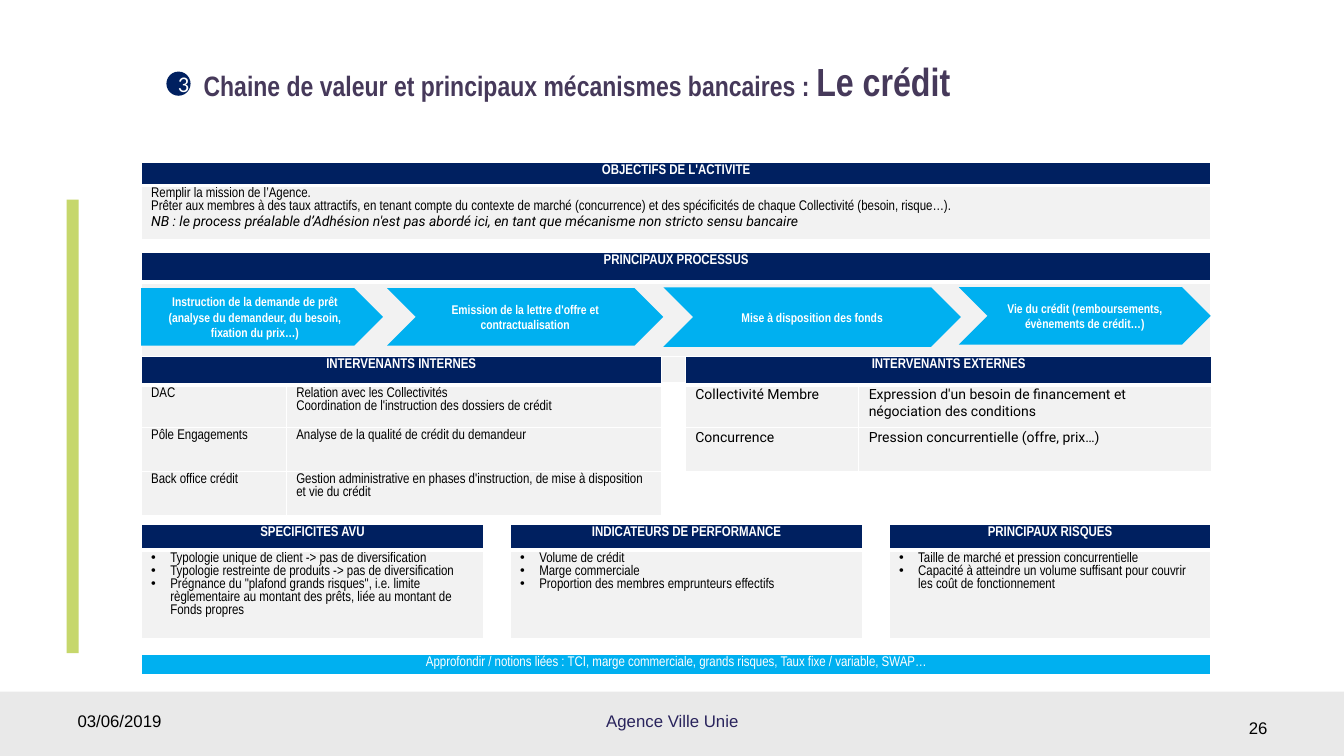
from dataclasses import dataclass, replace

import lxml.etree
import pptx
import pptx.dml.color
import pptx.enum.shapes
import pptx.enum.text
import pptx.oxml.ns
import pptx.util

SHAPES = pptx.enum.shapes.MSO_SHAPE
ALIGN = pptx.enum.text.PP_ALIGN
MIDDLE = pptx.enum.text.MSO_ANCHOR.MIDDLE
NAVY, SKY, PALE, WHITE, BLACK = "002060", "00B0F0", "F2F2F2", "FFFFFF", "000000"
LEFT, WIDTH = 10.5, 79.6  # content column, in percent of the slide width

deck = pptx.Presentation()
deck.slide_width = pptx.util.Inches(13.33)
deck.slide_height = pptx.util.Inches(7.5)
slide = deck.slides.add_slide(deck.slide_layouts[5])


@dataclass(frozen=True)
class Area:
    """A rectangle in percent of the slide's width and height."""
    left: float
    top: float
    width: float
    height: float

    def lengths(self) -> tuple[int, int, int, int]:
        return across(self.left), down(self.top), across(self.width), down(self.height)


@dataclass(frozen=True)
class Style:
    size: float = 10
    color: str = BLACK
    font: str = "Arial Narrow"
    bold: bool = False
    italic: bool = False
    align: ALIGN = ALIGN.LEFT


@dataclass(frozen=True)
class Cell:
    lines: tuple[str, ...] = ()
    fill: str = PALE
    style: Style = Style()
    bulleted: bool = False
    bottom_border: float = 1


@dataclass(frozen=True)
class Step:
    label: str
    preset: SHAPES
    area: Area


def across(percent: float) -> int:
    return round(deck.slide_width * percent / 100)


def down(percent: float) -> int:
    return round(deck.slide_height * percent / 100)


def rgb(value: str) -> pptx.dml.color.RGBColor:
    return pptx.dml.color.RGBColor.from_string(value)


def format_paragraph(para, style: Style) -> None:
    para.alignment = style.align
    for run in para.runs:
        run.font.size = pptx.util.Pt(style.size)
        run.font.name = style.font
        run.font.bold = style.bold
        run.font.italic = style.italic
        run.font.color.rgb = rgb(style.color)


def add_shape(preset: SHAPES, area: Area, fill: str, text: str = "", style: Style = Style()):
    shape = slide.shapes.add_shape(preset, *area.lengths())
    shape.shadow.inherit = False
    shape.fill.solid()
    shape.fill.fore_color.rgb = rgb(fill)
    shape.line.fill.background()
    shape.text_frame.text = text
    shape.text_frame.vertical_anchor = MIDDLE
    format_paragraph(shape.text_frame.paragraphs[0], style)
    return shape


def add_label(area: Area, text: str, style: Style) -> None:
    box = slide.shapes.add_textbox(*area.lengths())
    box.text_frame.word_wrap = True
    box.text_frame.vertical_anchor = MIDDLE
    box.text_frame.text = text
    format_paragraph(box.text_frame.paragraphs[0], style)


def add_element(parent, tag: str, **attributes: str):
    return lxml.etree.SubElement(parent, pptx.oxml.ns.qn(tag), attributes)


def add_borders(table_cell, bottom: float) -> None:
    properties = table_cell._tc.get_or_add_tcPr()
    for side, points in (("L", 1), ("R", 1), ("T", 1), ("B", bottom)):
        line = add_element(properties, f"a:ln{side}", w=str(pptx.util.Pt(points)))
        add_element(add_element(line, "a:solidFill"), "a:srgbClr", val=WHITE)


def add_bullet(para) -> None:
    properties = para._p.get_or_add_pPr()
    indent = pptx.util.Inches(0.19)
    properties.set("marL", str(indent))
    properties.set("indent", str(-indent))
    add_element(properties, "a:buChar", char="•")


def fill_cell(table_cell, cell: Cell) -> None:
    add_borders(table_cell, cell.bottom_border)
    if cell.fill:
        table_cell.fill.solid()
        table_cell.fill.fore_color.rgb = rgb(cell.fill)
    else:
        table_cell.fill.background()
    table_cell.margin_top = table_cell.margin_bottom = pptx.util.Inches(0.02)
    table_cell.text_frame.text = "\n".join(cell.lines)
    for para in table_cell.text_frame.paragraphs:
        if cell.bulleted:
            add_bullet(para)
        format_paragraph(para, cell.style)
        if not cell.lines:
            add_element(para._p, "a:endParaRPr", sz="1000")


def add_table(top: float, columns: list[float], heights: list[float], rows: list[list[Cell]]):
    area = Area(LEFT, top, WIDTH, sum(heights))
    table = slide.shapes.add_table(len(rows), len(columns), *area.lengths()).table
    table.first_row = table.horz_banding = False
    for column, width in zip(table.columns, columns):
        column.width = across(width)
    for index, (height, cells) in enumerate(zip(heights, rows)):
        table.rows[index].height = down(height)
        for position, cell in enumerate(cells):
            fill_cell(table.cell(index, position), cell)
    return table


HEADING = Style(color=WHITE, bold=True, align=ALIGN.CENTER)
ROBOTO = Style(font="Roboto")
GAP = Cell(fill="")
HEADER_GAP = replace(GAP, bottom_border=3)
BLANK = Cell(fill=WHITE)


def header(text: str) -> Cell:
    return Cell((text,), NAVY, HEADING, bottom_border=3)


def body(*lines: str, style: Style = Style()) -> Cell:
    return Cell(lines, style=style)


def bullets(*lines: str) -> Cell:
    return Cell(lines, bulleted=True)


STEPS = [
    Step("Instruction de la demande de prêt (analyse du demandeur, du besoin, fixation du prix…)",
         SHAPES.PENTAGON, Area(LEFT, 38.13, 18, 7.6)),
    Step("Emission de la lettre d'offre et contractualisation",
         SHAPES.CHEVRON, Area(28.8, 38.13, 20.55, 7.6)),
    Step("Mise à disposition des fonds", SHAPES.CHEVRON, Area(49.36, 38, 22.13, 7.87)),
    Step("Vie du crédit (remboursements, évènements de crédit…)",
         SHAPES.CHEVRON, Area(71.34, 38, 18.75, 7.6)),
]


def build_frame() -> None:
    add_shape(SHAPES.RECTANGLE, Area(0, 91.47, 100, 8.53), "E9E9E9")
    add_shape(SHAPES.RECTANGLE, Area(4.95, 26.4, 0.9, 60), "C6D76B")
    footer = Style(12, font="Arial")
    add_label(Area(34.2, 92.67, 31.66, 5.33), "Agence Ville Unie",
              replace(footer, color="29235C", align=ALIGN.CENTER))
    add_label(Area(5.03, 92.67, 23.33, 5.33), "03/06/2019", footer)
    add_label(Area(71.72, 93.6, 23.33, 5.33), "26", replace(footer, align=ALIGN.RIGHT))


def build_title() -> None:
    title = slide.shapes.title
    title.left, title.top, title.width, title.height = Area(14.4, 7.73, 84.8, 6.8).lengths()
    title.text_frame.vertical_anchor = MIDDLE
    title.text_frame.text = "Chaine de valeur et principaux mécanismes bancaires : "
    para = title.text_frame.paragraphs[0]
    para.line_spacing = 0.9
    para.add_run().text = "Le crédit"
    format_paragraph(para, Style(20, "46395A", bold=True))
    para.runs[1].font.size = pptx.util.Pt(28)
    badge = add_shape(SHAPES.OVAL, Area(12.38, 9.47, 1.8, 3.2), NAVY, "3",
                      Style(16, WHITE, "Calibri", align=ALIGN.CENTER))
    frame = badge.text_frame
    frame.margin_left = pptx.util.Inches(0.08)
    frame.margin_top = frame.margin_right = frame.margin_bottom = 0


def build_content() -> None:
    goals = add_table(21.47, [WIDTH], [3.07, 6.8], [[header("OBJECTIFS DE L'ACTIVITE")], [body(
        "Remplir la mission de l’Agence.",
        "Prêter aux membres à des taux attractifs, en tenant compte du contexte de marché (concurrence) "
        "et des spécificités de chaque Collectivité (besoin, risque…).",
        "NB : le process préalable d’Adhésion n'est pas abordé ici, en tant que mécanisme "
        "non stricto sensu bancaire")]])
    format_paragraph(goals.cell(1, 0).text_frame.paragraphs[2], replace(ROBOTO, italic=True))
    add_table(33.33, [WIDTH], [4, 13.33], [[header("PRINCIPAUX PROCESSUS")], [body()]])
    for step in STEPS:
        add_shape(step.preset, step.area, SKY, step.label, replace(HEADING, size=9))
    actors = add_table(47.2, [10.8, 27.9, 1.73, 12.9, 26.27], [3.73, 5.6, 5.87, 5.87], [
        [header("INTERVENANTS INTERNES"), HEADER_GAP, HEADER_GAP,
         header("INTERVENANTS EXTERNES"), HEADER_GAP],
        [body("DAC"), body("Relation avec les Collectivités",
                           "Coordination de l'instruction des dossiers de crédit"), GAP,
         body("Collectivité Membre", style=ROBOTO),
         body("Expression d'un besoin de financement et négociation des conditions", style=ROBOTO)],
        [body("Pôle Engagements"), body("Analyse de la qualité de crédit du demandeur"), GAP,
         body("Concurrence", style=ROBOTO),
         body("Pression concurrentielle (offre, prix…)", style=ROBOTO)],
        [body("Back office crédit"),
         body("Gestion administrative en phases d'instruction, de mise à disposition et vie du crédit"),
         GAP, BLANK, BLANK]])
    for first in (0, 3):
        actors.cell(0, first).merge(actors.cell(0, first + 1))
    add_table(69.33, [25.5, 1.95, 26.25, 1.95, 23.95], [3.47, 9.73], [
        [header("SPECIFICITES AVU"), HEADER_GAP, header("INDICATEURS DE PERFORMANCE"),
         HEADER_GAP, header("PRINCIPAUX RISQUES")],
        [bullets("Typologie unique de client -> pas de diversification",
                 "Typologie restreinte de produits -> pas de diversification",
                 "Prégnance du \"plafond grands risques\", i.e. limite règlementaire au montant "
                 "des prêts, liée au montant de Fonds propres"), GAP,
         bullets("Volume de crédit", "Marge commerciale",
                 "Proportion des membres emprunteurs effectifs"), GAP,
         bullets("Taille de marché et pression concurrentielle",
                 "Capacité à atteindre un volume suffisant pour couvrir les coût de fonctionnement")]])
    related = ("Approfondir / notions liées : TCI, marge commerciale, grands risques, "
               "Taux fixe / variable, SWAP…")
    add_table(86.53, [WIDTH], [2.93],
              [[Cell((related,), SKY, replace(HEADING, bold=False), bottom_border=3)]])


def main() -> None:
    build_frame()
    build_title()
    build_content()
    deck.save("out.pptx")


if __name__ == "__main__":
    main()
